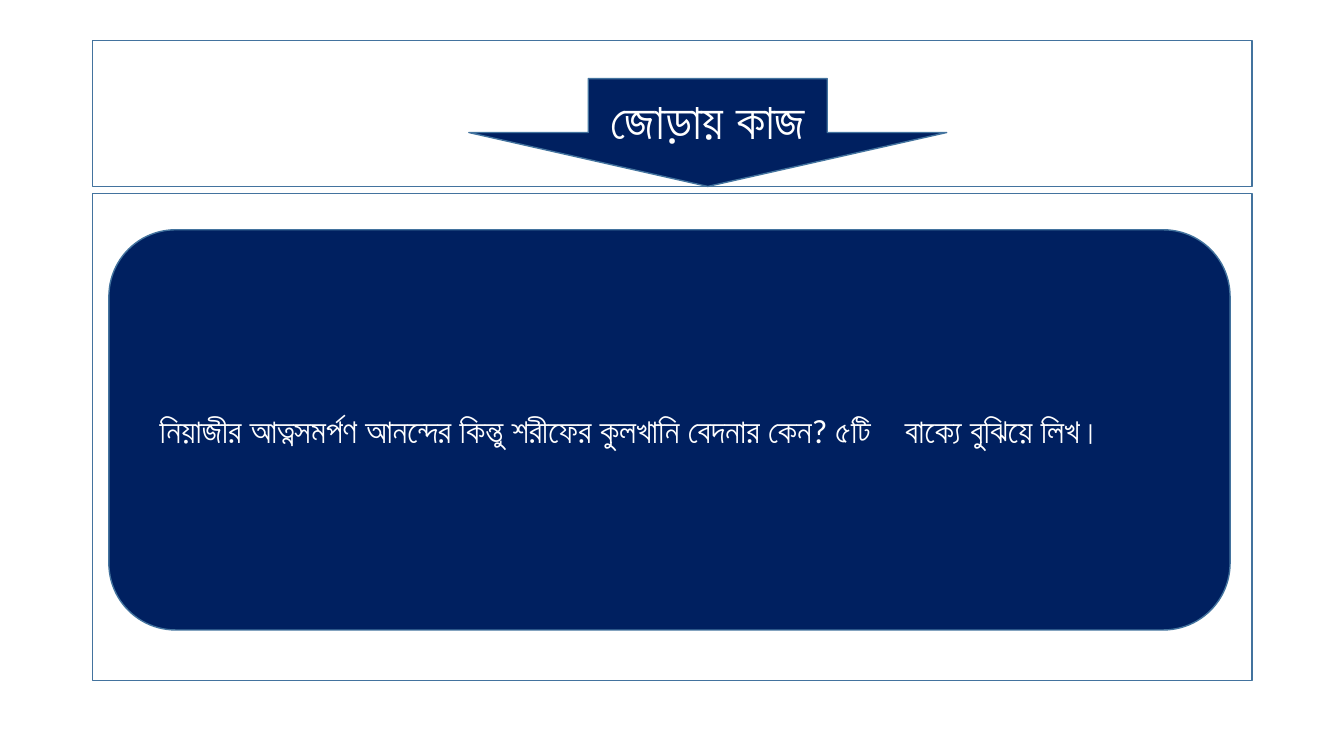
from pptx import Presentation
from pptx.dml.color import RGBColor
from pptx.enum.shapes import MSO_SHAPE
from pptx.enum.text import MSO_ANCHOR, PP_ALIGN
from pptx.util import Inches, Pt
from lxml.etree import SubElement
from pptx.oxml.ns import qn

WHITE = RGBColor(0xFF, 0xFF, 0xFF)
NAVY = RGBColor(0x00, 0x20, 0x60)
EDGE = RGBColor(0x43, 0x73, 0x9E)

deck = Presentation()
deck.slide_width = Inches(13.33)
deck.slide_height = Inches(7.5)
slide = deck.slides.add_slide(deck.slide_layouts[6])

LEFT, WIDE = 0.92, 11.5


def add_box(kind, box, fill):
    shape = slide.shapes.add_shape(kind, *[Inches(n) for n in box])
    shape.shadow.inherit = False
    shape.fill.solid()
    shape.fill.fore_color.rgb = fill
    shape.line.color.rgb = EDGE
    shape.line.width = Pt(1)
    return shape


def add_text(shape, text, size, align):
    frame = shape.text_frame
    frame.text = text
    frame.word_wrap = True
    frame.vertical_anchor = MSO_ANCHOR.MIDDLE
    line = frame.paragraphs[0]
    line.alignment = align
    for run in line.runs:
        run.font.name = "Calibri"
        run.font.size = Pt(size)
        run.font.color.rgb = WHITE
    return line


add_box(MSO_SHAPE.RECTANGLE, (LEFT, 0.4, WIDE, 1.45), WHITE)
arrow = add_box(MSO_SHAPE.DOWN_ARROW, (4.65, 0.78, 4.74, 1.07), NAVY)
add_text(arrow, "জোড়ায় কাজ", 36, PP_ALIGN.CENTER)

add_box(MSO_SHAPE.RECTANGLE, (LEFT, 1.92, WIDE, 4.83), WHITE)
panel = add_box(MSO_SHAPE.ROUNDED_RECTANGLE, (1.08, 2.28, 11.12, 3.97), NAVY)
task = add_text(
    panel,
    "নিয়াজীর আত্নসমর্পণ আনন্দের কিন্তু শরীফের কুলখানি বেদনার কেন? ৫টি\tবাক্যে বুঝিয়ে লিখ।",
    24,
    PP_ALIGN.LEFT,
)
panel.text_frame.margin_left = Inches(0.31)
tabs = SubElement(task._p.get_or_add_pPr(), qn("a:tabLst"))
SubElement(tabs, qn("a:tab"), pos=str(Inches(7.39)), algn="l")

deck.save("out.pptx")
